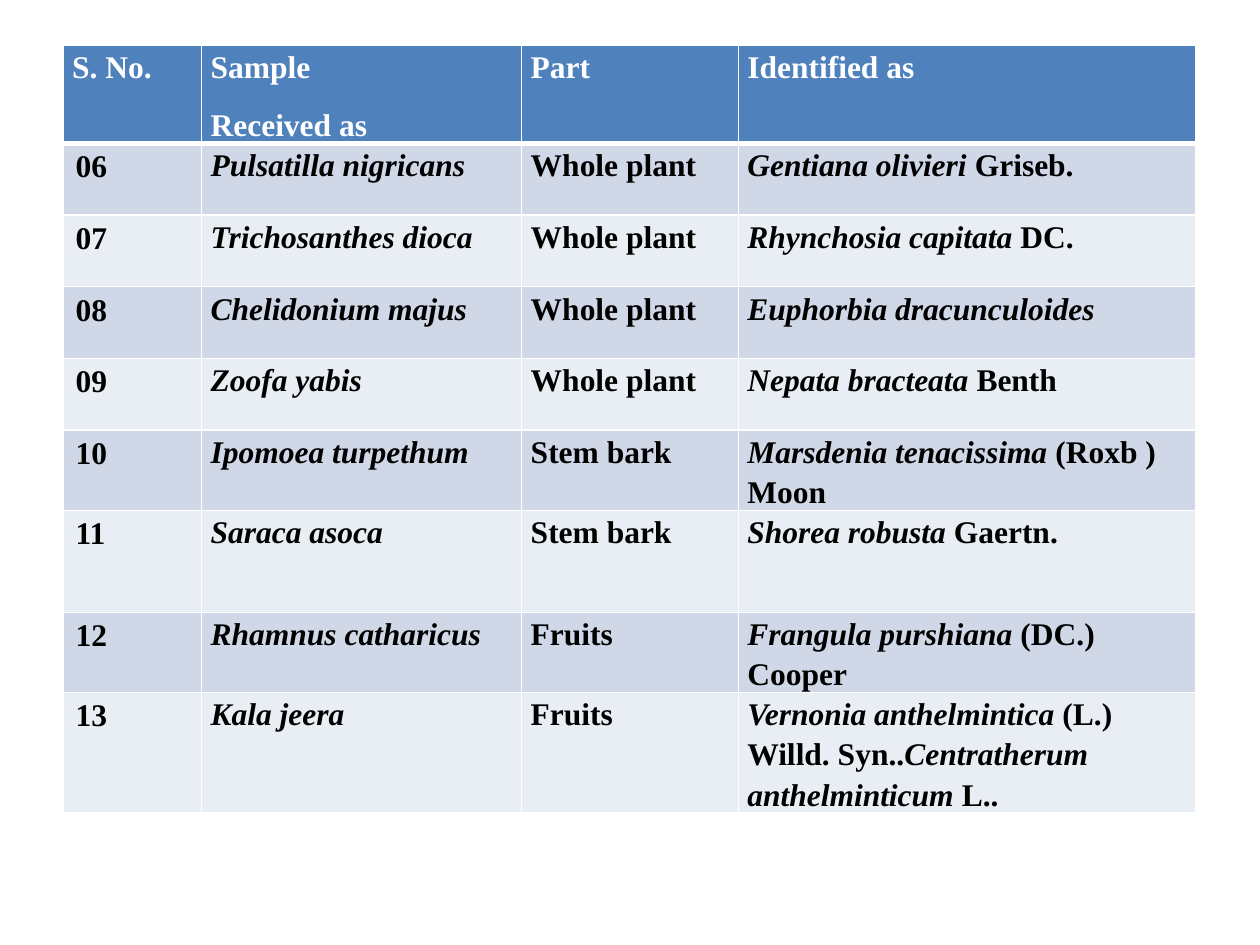
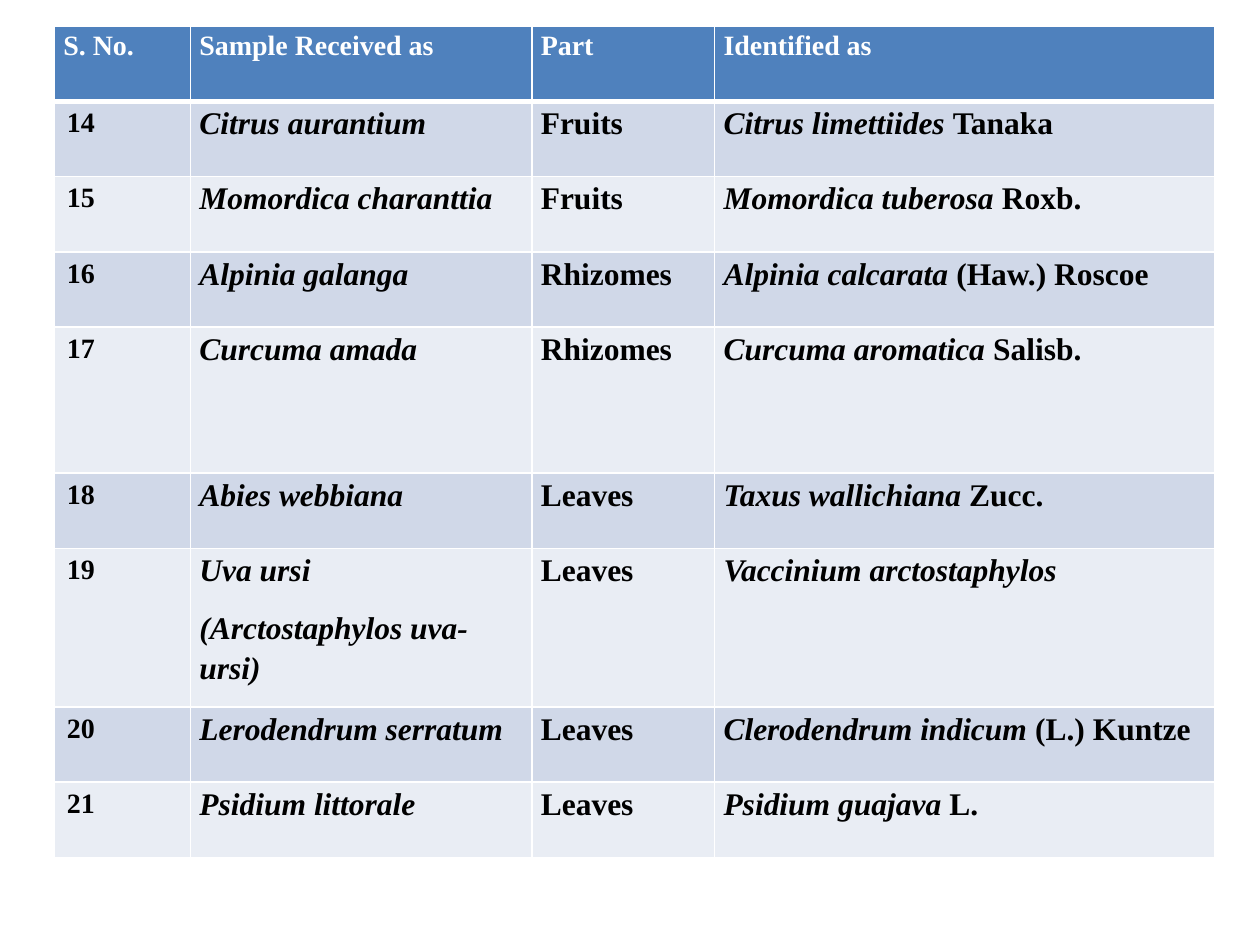
import pptx
import pptx.util
import pptx.dml.color
import pptx.oxml
import pptx.oxml.ns

Pt = pptx.util.Pt
RGBColor = pptx.dml.color.RGBColor

# Shared look
FONT = "Times New Roman"
WHITE = RGBColor(0xFF, 0xFF, 0xFF)
BLACK = RGBColor(0x00, 0x00, 0x00)
HEADER_BLUE = RGBColor(0x4F, 0x81, 0xBD)
BANDS = [RGBColor(0xD0, 0xD8, 0xE8), RGBColor(0xE9, 0xED, 0xF4)]
BODY_SIZE = 18

# Each page: table place, column widths, row heights and body rows.
# Text between asterisks is italic; a line break starts a new paragraph.
pages = [
    dict(
        left=36, top=26, small_size=18,
        widths=[79.2, 182.9, 123.8, 261.4],
        heights=[41, 41, 41, 41, 41, 41, 58.3, 41, 41],
        sample_heading="Sample\nReceived as", first_number=6,
        rows=[
            ("*Pulsatilla nigricans*", "Whole plant", "*Gentiana olivieri *Griseb."),
            ("*Trichosanthes dioca*", "Whole plant", "*Rhynchosia capitata *DC."),
            ("*Chelidonium majus*", "Whole plant", "*Euphorbia dracunculoides*"),
            ("*Zoofa yabis*", "Whole plant", "*Nepata bracteata *Benth"),
            ("*Ipomoea turpethum*", "Stem bark", "*Marsdenia tenacissima* (Roxb ) Moon"),
            ("*Saraca asoca*", "Stem bark", "*Shorea robusta *Gaertn."),
            ("*Rhamnus catharicus*", "Fruits", "*Frangula purshiana* (DC.) Cooper"),
            ("*Kala jeera*", "Fruits",
             "*Vernonia anthelmintica *(L.) Willd. Syn..*Centratherum anthelminticum *L.."),
        ],
    ),
    dict(
        left=31, top=15, small_size=16,
        widths=[77.8, 195.1, 104.4, 285.8],
        heights=[43, 43, 43, 43, 83.5, 43, 90.7, 43, 43],
        sample_heading="Sample Received as", first_number=14,
        rows=[
            ("*Citrus aurantium*", "Fruits", "*Citrus limettiides *Tanaka"),
            ("*Momordica charanttia*", "Fruits", "*Momordica tuberosa *Roxb."),
            ("*Alpinia galanga*", "Rhizomes", "*Alpinia calcarata* (Haw.) Roscoe"),
            ("*Curcuma amada*", "Rhizomes", "*Curcuma aromatica *Salisb."),
            ("*Abies webbiana*", "Leaves", "*Taxus wallichiana *Zucc."),
            ("*Uva ursi*\n*(Arctostaphylos uva-ursi)*", "Leaves", "*Vaccinium arctostaphylos*"),
            ("*Lerodendrum serratum*", "Leaves", "*Clerodendrum indicum *(L.) Kuntze"),
            ("*Psidium littorale*", "Leaves", "*Psidium guajava *L."),
        ],
    ),
]


def write_text(cell, text, size=BODY_SIZE, color=BLACK, spaced=True):
    """Fill a cell with bold text; spaced cells have tight insets and open lines."""
    if spaced:
        cell.margin_left = cell.margin_right = Pt(5.2)
        cell.margin_top = cell.margin_bottom = Pt(0)
    for index, line in enumerate(text.split("\n")):
        frame = cell.text_frame
        para = frame.add_paragraph() if index else frame.paragraphs[0]
        if spaced:
            para.line_spacing = 1.15
            para.space_before = Pt(10)
        for position, piece in enumerate(line.split("*")):
            if piece:
                span = para.add_run()
                span.text = piece
                span.font.name = FONT
                span.font.size = Pt(size)
                span.font.bold = True
                span.font.italic = position % 2 == 1
                span.font.color.rgb = color


def draw_borders(cell, top=1, bottom=1):
    """Add white borders on all four sides, with widths in points."""
    properties = cell._tc.get_or_add_tcPr()
    for side, width in (("L", 1), ("R", 1), ("T", top), ("B", bottom)):
        properties.append(pptx.oxml.parse_xml(
            f'<a:ln{side} {pptx.oxml.ns.nsdecls("a")} w="{Pt(width)}">'
            f'<a:solidFill><a:srgbClr val="{WHITE}"/></a:solidFill></a:ln{side}>'))


deck = pptx.Presentation()
deck.slide_width, deck.slide_height = Pt(720), Pt(540)

for content in pages:
    page = deck.slides.add_slide(deck.slide_layouts[6])
    widths, heights = content["widths"], content["heights"]
    table = page.shapes.add_table(
        len(heights), len(widths), Pt(content["left"]), Pt(content["top"]),
        Pt(sum(widths)), Pt(sum(heights))).table
    for column, width in zip(table.columns, widths):
        column.width = Pt(width)
    for row, height in zip(table.rows, heights):
        row.height = Pt(height)

    # Header row
    headings = ["S. No.", content["sample_heading"], "Part", "Identified as"]
    for column, heading in enumerate(headings):
        cell = table.cell(0, column)
        draw_borders(cell, bottom=3)
        cell.fill.solid()
        cell.fill.fore_color.rgb = HEADER_BLUE
        write_text(cell, heading, size=content["small_size"], color=WHITE)

    # Numbered body rows in alternating bands
    for index, sample in enumerate(content["rows"]):
        number = f"{content['first_number'] + index:02d}"
        for column, text in enumerate((number, *sample)):
            cell = table.cell(index + 1, column)
            draw_borders(cell, top=1 if index else 3)
            cell.fill.solid()
            cell.fill.fore_color.rgb = BANDS[index % 2]
            if column == 0:
                write_text(cell, text, size=content["small_size"], spaced=False)
            else:
                write_text(cell, text)

deck.save("out.pptx")
